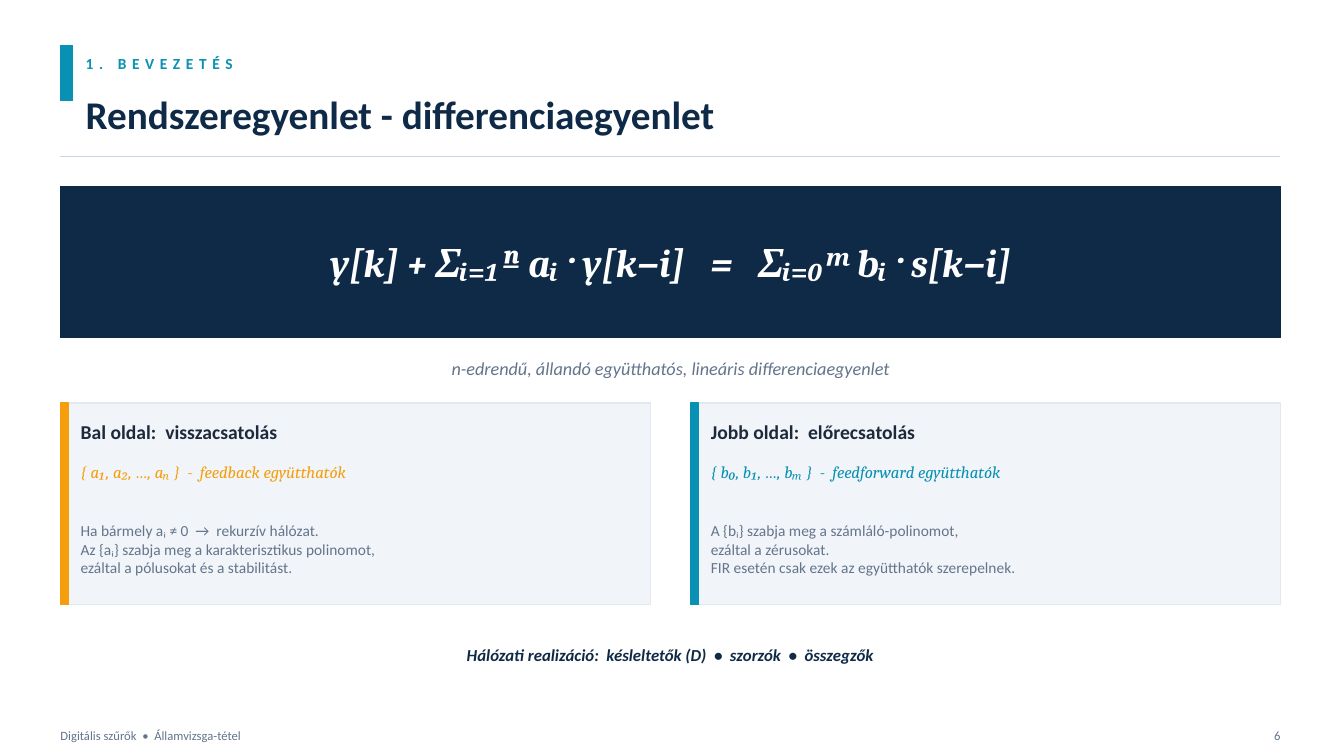
"""Build the slide on the difference equation of a digital filter."""
from lxml import etree
from pptx import Presentation
from pptx.dml.color import RGBColor
from pptx.enum import shapes, text
from pptx.oxml import ns
from pptx.util import Inches, Pt

NAVY, TEAL, AMBER, GREY = "0F2A47", "0891B2", "F59E0B", "64748B"
INK, PANEL, BORDER, RULE, WHITE = "1E293B", "F1F5F9", "E2E8F0", "CBD5E1", "FFFFFF"
LEFT, WIDTH = 0.6, 12.1
CARD_TOP, CARD_W, CARD_H = 4, 5.85, 2
LEFT_ALIGN, CENTER, RIGHT = text.PP_ALIGN.LEFT, text.PP_ALIGN.CENTER, text.PP_ALIGN.RIGHT

SECTION = "1. BEVEZETÉS"
TITLE = "Rendszeregyenlet - differenciaegyenlet"
EQUATION = "y[k] + Σᵢ₌₁ⁿ aᵢ · y[k−i]   =   Σᵢ₌₀ᵐ bᵢ · s[k−i]"
CAPTION = "n-edrendű, állandó együtthatós, lineáris differenciaegyenlet"
CARDS = [
    (AMBER, "Bal oldal:  visszacsatolás",
     "{ a₁, a₂, …, aₙ }  -  feedback együtthatók",
     ["Ha bármely aᵢ ≠ 0  →  rekurzív hálózat.",
      "Az {aᵢ} szabja meg a karakterisztikus polinomot,",
      "ezáltal a pólusokat és a stabilitást."]),
    (TEAL, "Jobb oldal:  előrecsatolás",
     "{ b₀, b₁, …, bₘ }  -  feedforward együtthatók",
     ["A {bᵢ} szabja meg a számláló-polinomot,",
      "ezáltal a zérusokat.",
      "FIR esetén csak ezek az együtthatók szerepelnek."]),
]
REALIZATION = "Hálózati realizáció:  késleltetők (D)  •  szorzók  •  összegzők"
FOOTER = "Digitális szűrők  •  Államvizsga-tétel"
PAGE = "6"


def rgb(color):
    return RGBColor.from_string(color)


def add_box(s, x, y, w, h, fill, line=None):
    sp = s.shapes.add_shape(shapes.MSO_SHAPE.RECTANGLE,
                            Inches(x), Inches(y), Inches(w), Inches(h))
    sp.shadow.inherit = False
    sp.fill.solid()
    sp.fill.fore_color.rgb = rgb(fill)
    sp.line.color.rgb = rgb(line or fill)
    sp.line.width = Pt(1)


def set_text(sp, lines, size, color, bold=False, italic=False,
             font="Calibri", align=LEFT_ALIGN):
    tf = sp.text_frame
    tf.word_wrap = True
    tf.auto_size = text.MSO_AUTO_SIZE.NONE
    tf.vertical_anchor = text.MSO_ANCHOR.MIDDLE
    tf.margin_left = tf.margin_right = tf.margin_top = tf.margin_bottom = 0
    tf.text = "\n".join(lines)
    for p in tf.paragraphs:
        p.alignment = align
        p.font.name = font
        p.font.size = Pt(size)
        p.font.bold = bold
        p.font.italic = italic
        p.font.color.rgb = rgb(color)


def add_text(s, x, y, w, h, lines, size, color, **style):
    sp = s.shapes.add_textbox(Inches(x), Inches(y), Inches(w), Inches(h))
    set_text(sp, lines, size, color, **style)
    return sp


def add_header(s):
    add_box(s, LEFT, 0.45, 0.12, 0.55, TEAL)
    sp = add_text(s, 0.85, 0.45, 8, 0.35, [SECTION], 11, TEAL, bold=True)
    r = sp.text_frame.paragraphs[0].runs[0]
    r.font._element.set("spc", "400")
    title = s.shapes.title
    title.left, title.top = Inches(0.85), Inches(0.78)
    title.width, title.height = Inches(12), Inches(0.7)
    set_text(title, [TITLE], 28, NAVY, bold=True)
    rule = s.shapes.add_connector(shapes.MSO_CONNECTOR.STRAIGHT, Inches(LEFT),
                                  Inches(1.55), Inches(LEFT + WIDTH), Inches(1.55))
    rule.line.color.rgb = rgb(RULE)
    rule.line.width = Pt(0.75)
    etree.SubElement(rule._element.spPr, ns.qn("a:effectLst"))


def add_card(s, x, accent, heading, coefficients, notes):
    add_box(s, x, CARD_TOP, CARD_W, CARD_H, PANEL, BORDER)
    add_box(s, x, CARD_TOP, 0.08, CARD_H, accent)
    x, w = x + 0.2, CARD_W - 0.25
    add_text(s, x, CARD_TOP + 0.1, w, 0.36, [heading], 14, INK, bold=True)
    add_text(s, x, CARD_TOP + 0.5, w, 0.36, [coefficients], 12, accent,
             italic=True, font="Cambria")
    add_text(s, x, CARD_TOP + 0.95, w, 1, notes, 11, GREY)


def main():
    prs = Presentation()
    prs.slide_width, prs.slide_height = Inches(13.33), Inches(7.5)
    s = prs.slides.add_slide(prs.slide_layouts.get_by_name("Title Only"))
    add_header(s)

    add_box(s, LEFT, 1.85, WIDTH, 1.5, NAVY)
    add_text(s, LEFT, 1.85, WIDTH, 1.5, [EQUATION], 28, WHITE,
             bold=True, italic=True, font="Cambria", align=CENTER)
    add_text(s, LEFT, 3.45, WIDTH, 0.4, [CAPTION], 13, GREY, italic=True, align=CENTER)

    for i, card in enumerate(CARDS):
        add_card(s, LEFT + i * (WIDTH - CARD_W), *card)

    add_text(s, LEFT, 6.3, WIDTH, 0.4, [REALIZATION], 12, NAVY,
             bold=True, italic=True, align=CENTER)
    add_text(s, LEFT, 7.15, 8, 0.3, [FOOTER], 9, GREY)
    add_text(s, 12.4, 7.15, 0.3, 0.3, [PAGE], 9, GREY, align=RIGHT)
    prs.save("out.pptx")


if __name__ == "__main__":
    main()
